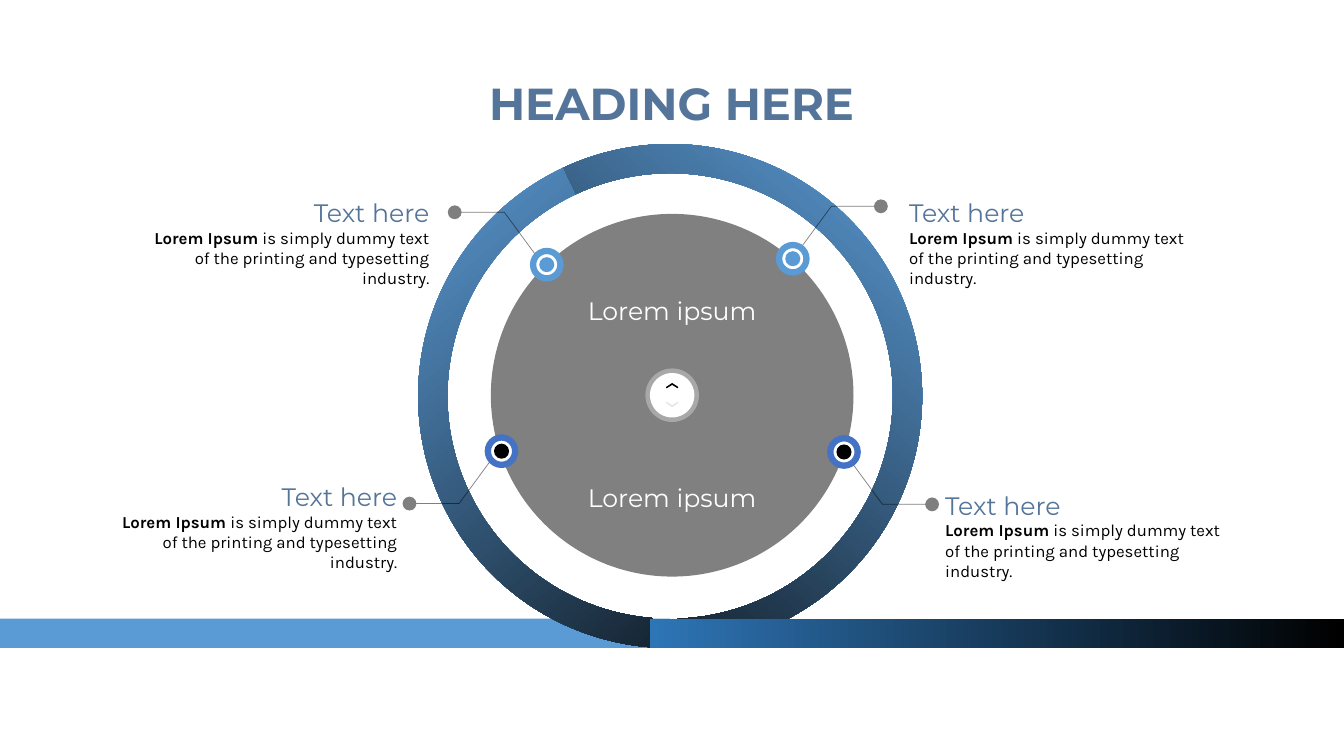
from lxml.etree import SubElement
from pptx import Presentation
from pptx.dml.color import RGBColor
from pptx.enum.shapes import MSO_SHAPE
from pptx.enum.text import MSO_ANCHOR, MSO_AUTO_SIZE, PP_ALIGN
from pptx.oxml.ns import qn
from pptx.util import Cm, Pt

WHITE = RGBColor(0xFF, 0xFF, 0xFF)
BLACK = RGBColor(0, 0, 0)
GREY = RGBColor(0x80, 0x80, 0x80)
PALE = RGBColor(0xE7, 0xE6, 0xE6)
SKY = RGBColor(0x5B, 0x9B, 0xD5)
BLUE = RGBColor(0x44, 0x72, 0xC4)
DEEP = RGBColor(0x2E, 0x75, 0xB6)
SLATE = RGBColor(0x54, 0x75, 0x99)


def place(slide, kind, box, fill):
    """Add a flat preset shape in a box given in centimetres."""
    shape = slide.shapes.add_shape(kind, *map(Cm, box))
    shape.shadow.inherit = False
    shape.line.fill.background()
    shape.fill.solid()
    shape.fill.fore_color.rgb = fill
    return shape


def disc(slide, x, y, size, fill):
    """Add a circle around a centre point."""
    box = (x - size / 2, y - size / 2, size, size)
    return place(slide, MSO_SHAPE.OVAL, box, fill)


def trace(slide, points, close):
    """Add a freeform through points given in centimetres."""
    spots = [(Cm(x), Cm(y)) for x, y in points]
    pen = slide.shapes.build_freeform(*spots[0], scale=1.0)
    pen.add_line_segments(spots[1:], close=close)
    shape = pen.convert_to_shape()
    shape.shadow.inherit = False
    return shape


def fade(shape, percent):
    """Make the colours of a shape partly transparent."""
    for color in shape.element.spPr.iter(qn("a:srgbClr")):
        SubElement(color, qn("a:alpha"), val=str(percent * 1000))


def shade(shape, start, angle):
    """Fill a shape with a linear blend from a colour to black."""
    shape.fill.gradient()
    shape.fill.gradient_angle = angle
    for stop, color, spot in zip(shape.fill.gradient_stops, (start, BLACK), (0, 1)):
        stop.color.rgb = color
        stop.position = spot


def write(para, text, face, size, color, bold=False):
    """Add one formatted run to a paragraph."""
    run = para.add_run()
    run.text = text
    font = run.font
    font.name, font.size, font.bold = face, Pt(size), bold
    font.color.rgb = color


def add_text(slide, box):
    """Add a wrapping text box and return its frame."""
    frame = slide.shapes.add_textbox(*map(Cm, box)).text_frame
    frame.word_wrap = True
    return frame


def heading(slide, box):
    """Move and format the title placeholder."""
    title = slide.shapes.title
    title.left, title.top, title.width, title.height = map(Cm, box)
    frame = title.text_frame
    frame.auto_size = MSO_AUTO_SIZE.NONE
    frame.vertical_anchor = MSO_ANCHOR.TOP
    frame.word_wrap = False
    para = frame.paragraphs[0]
    para.alignment = PP_ALIGN.LEFT
    write(para, "HEADING HERE", "Montserrat", 32, SLATE, True)


def arc(slide, box, start, end, angle):
    """Draw one shaded part of the ring between two angles in degrees."""
    shape = place(slide, MSO_SHAPE.BLOCK_ARC, box, SKY)
    for i, value in enumerate((start * 0.6, end * 0.6, 0.058)):
        shape.adjustments[i] = value
    shade(shape, SKY, angle)


def ring(slide, box):
    """Draw the ring and the band that runs into and out of it."""
    x, y, w, h = box
    thick = 0.74
    top = y + h - thick
    arc(slide, box, 244.7, 88, 230)
    place(slide, MSO_SHAPE.RECTANGLE, (0, top, x + w / 2, thick), SKY)
    arc(slide, box, 94.5, 244.7, 310)
    left = x + 5.84
    band = place(slide, MSO_SHAPE.RECTANGLE, (left, top, 33.87 - left, thick), DEEP)
    shade(band, DEEP, 0)


def chevron(slide, x, y, way, color):
    """Draw a thin chevron whose tip points along way."""
    points = [(0, 0), (0.15, 0.1), (0.15, 0.13), (0.13, 0.13),
              (0, 0.05), (-0.13, 0.13), (-0.15, 0.13), (-0.15, 0.1)]
    shape = trace(slide, [(x + a, y + b * way) for a, b in points], True)
    shape.fill.solid()
    shape.fill.fore_color.rgb = color
    shape.line.fill.background()


def hub(slide, box):
    """Draw the grey disc with its button and two labels."""
    x, y, w, h = box
    mid, cy = x + w / 2, y + h / 2
    disc(slide, mid, cy, w, GREY)
    fade(disc(slide, mid, cy, 1.35, WHITE), 32)
    disc(slide, mid, cy, 1.12, WHITE)
    chevron(slide, mid, cy + 0.3, -1, PALE)
    chevron(slide, mid, cy - 0.31, 1, BLACK)
    for drop in (1.93, 6.63):
        frame = add_text(slide, (mid - 2.77, y + drop, 5.54, 1.02))
        para = frame.paragraphs[0]
        para.alignment = PP_ALIGN.CENTER
        write(para, "Lorem ipsum", "Montserrat", 18, WHITE)


def leader(slide, x, y, side, rise):
    """Draw a bent line that ends in a dot."""
    end = y + 1.32 * rise
    points = [(x, y), (x + 0.97 * side, end), (x + 2.22 * side, end)]
    shape = trace(slide, points, False)
    shape.fill.background()
    shape.line.width = Pt(0.5)
    shape.line.color.rgb = BLACK
    fade(shape, 50)
    line = shape.element.spPr.find(qn("a:ln"))
    SubElement(line, qn("a:tailEnd"), type="oval", w="lg", len="lg")


def callout(slide, box, pin, side, rise, rim, core):
    """Draw a pin on the disc, its leader and its text."""
    x, y = pin
    leader(slide, x if side > 0 else x - 0.1, y, side, rise)
    dot = disc(slide, x, y, 0.69, WHITE)
    dot.line.color.rgb = rim
    dot.line.width = Pt(4.5)
    disc(slide, x, y, 0.38, core)
    frame = add_text(slide, box)
    head, body = frame.paragraphs[0], frame.add_paragraph()
    head.alignment = body.alignment = PP_ALIGN.LEFT if side > 0 else PP_ALIGN.RIGHT
    write(head, "Text here", "Montserrat", 18, SLATE)
    write(body, "Lorem Ipsum", "Karla", 12, BLACK, True)
    write(body, " is simply dummy text of the printing and typesetting industry.",
          "Karla", 12, BLACK)


def main():
    """Build the slide and save it."""
    deck = Presentation()
    deck.slide_width, deck.slide_height = Cm(33.87), Cm(19.05)
    slide = deck.slides.add_slide(deck.slide_layouts[5])
    heading(slide, (12.07, 1.78, 9.73, 1.63))
    ring(slide, (10.54, 3.63, 12.7, 12.7))
    hub(slide, (12.37, 5.39, 9.14, 9.14))
    wide, high = 7.49, 2.57
    for left, top, pin, side, rise, rim, core in (
        (22.66, 4.85, (19.98, 6.52), 1, -1, SKY, SKY),
        (2.77, 12.01, (12.64, 11.37), -1, 1, BLUE, BLACK),
        (23.57, 12.22, (21.27, 11.39), 1, 1, BLUE, BLACK),
        (3.58, 4.85, (13.78, 6.67), -1, -1, SKY, SKY),
    ):
        callout(slide, (left, top, wide, high), pin, side, rise, rim, core)
    deck.save("out.pptx")


if __name__ == "__main__":
    main()
